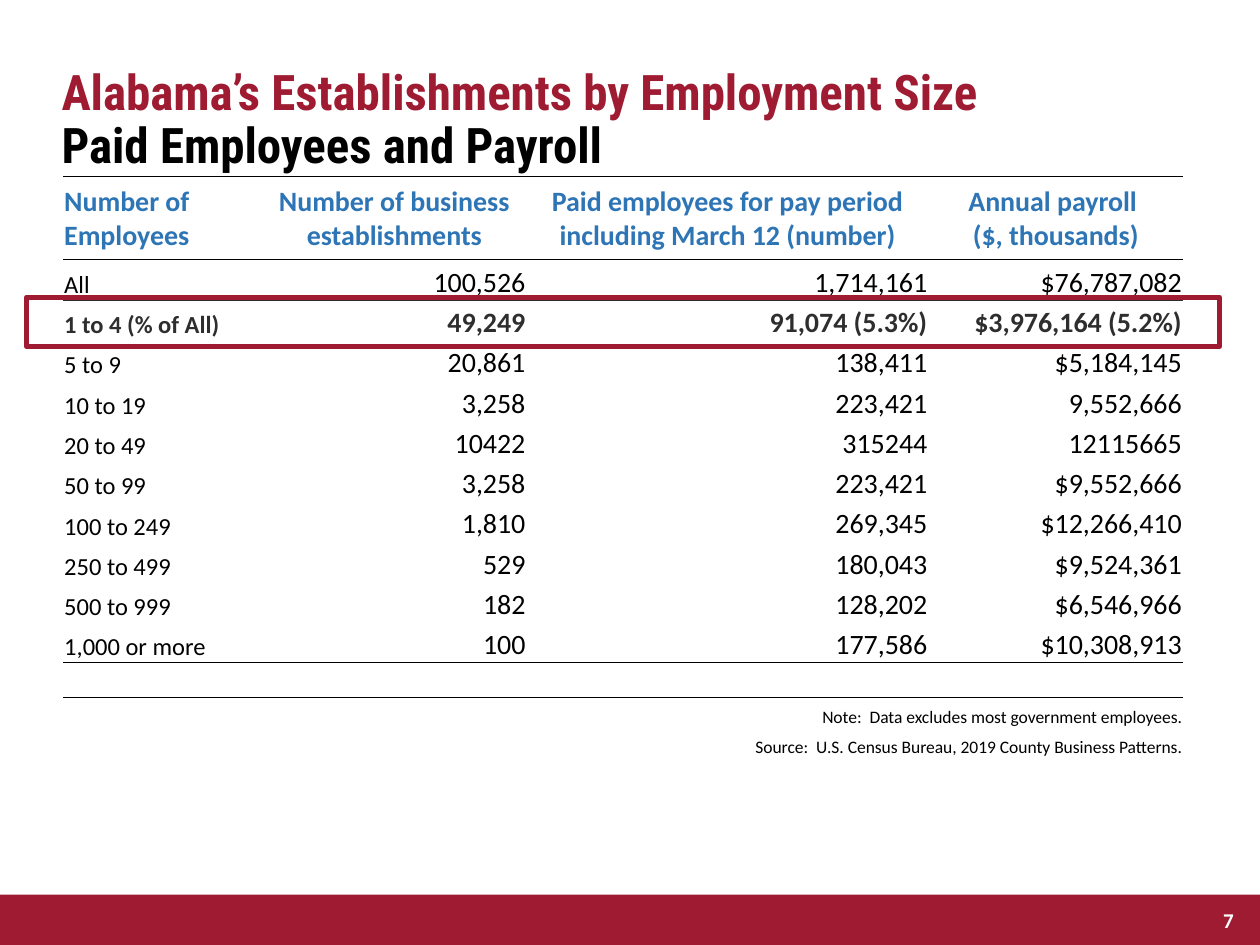
import pptx
import pptx.util
import pptx.dml.color
import pptx.enum.shapes
import pptx.enum.text
import pptx.oxml.ns
from lxml import etree

Inches, Pt = pptx.util.Inches, pptx.util.Pt
RGBColor = pptx.dml.color.RGBColor
Align, Anchor = pptx.enum.text.PP_ALIGN, pptx.enum.text.MSO_ANCHOR
qn = pptx.oxml.ns.qn

RED = RGBColor(0x9E, 0x1B, 0x32)
BLUE = RGBColor(0x2E, 0x75, 0xB6)
BLACK = RGBColor(0, 0, 0)
WHITE = RGBColor(255, 255, 255)
PLAIN = "{2D5ABB26-0587-4C30-8999-92F81FD0307C}"  # no style, no grid

HEAD = ["Number of Employees", "Number of business establishments",
        "Paid employees for pay period including March 12 (number)",
        "Annual payroll \n($, thousands)"]
ROWS = [
    ["All", "100,526", "1,714,161", "$76,787,082"],
    ["1 to 4 (% of All)", "49,249", "91,074 (5.3%)", "$3,976,164 (5.2%)"],
    ["5 to 9", "20,861", "138,411", "$5,184,145"],
    ["10 to 19", "3,258", "223,421", "9,552,666"],
    ["20 to 49", "10422", "315244", "12115665"],
    ["50 to 99", "3,258", "223,421", "$9,552,666"],
    ["100 to 249", "1,810", "269,345", "$12,266,410"],
    ["250 to 499", "529", "180,043", "$9,524,361"],
    ["500 to 999", "182", "128,202", "$6,546,966"],
    ["1,000 or more", "100", "177,586", "$10,308,913"],
]
NOTES = ["", "Note:  Data excludes most government employees.",
         "Source:  U.S. Census Bureau, 2019 County Business Patterns."]
WIDTHS = [1.58, 2.1, 3.19, 2.02]
HEIGHTS = [0.66] + [0.32] * len(ROWS) + [0.28, 0.24, 0.24]


class Deck:
    base = {"name": "Calibri", "size": Pt(16), "bold": False}

    def __init__(self, slide):
        self.slide = slide

    def style(self, font, color, **extra):
        for key, value in {**self.base, **extra}.items():
            setattr(font, key, value)
        font.color.rgb = color

    def box(self, at, fill=None, line=None, alpha=None):
        rect = self.slide.shapes.add_shape(
            pptx.enum.shapes.MSO_SHAPE.RECTANGLE, *map(Inches, at))
        rect.shadow.inherit = False
        rect.fill.solid()
        rect.fill.fore_color.rgb = fill
        if alpha:
            tint = rect.fill._xPr.find(".//" + qn("a:srgbClr"))
            etree.SubElement(tint, qn("a:alpha"), val=str(alpha * 1000))
        if line:
            rect.line.color.rgb = line
            rect.line.width = Pt(2.75)
        else:
            rect.line.fill.background()

    def text(self, at, parts, align=Align.LEFT, anchor=Anchor.TOP,
             space=1.0, **extra):
        frame = self.slide.shapes.add_textbox(*map(Inches, at)).text_frame
        frame.word_wrap = True
        frame.vertical_anchor = anchor
        para = frame.paragraphs[0]
        para.alignment, para.line_spacing = align, space
        for i, (words, color) in enumerate(parts):
            if i:
                para.add_line_break()
            run = para.add_run()
            run.text = words
            self.style(run.font, color, **extra)

    def table(self, at, widths, heights):
        size = at + (sum(widths), sum(heights))
        grid = self.slide.shapes.add_table(
            len(heights), len(widths), *map(Inches, size)).table
        grid.first_row = grid.horz_banding = False
        grid._tbl.tblPr.find(qn("a:tableStyleId")).text = PLAIN
        for col, width in zip(grid.columns, widths):
            col.width = Inches(width)
        for row, height in zip(grid.rows, heights):
            row.height = Inches(height)
        return grid

    def cell(self, cell, words, color=BLACK, align=Align.RIGHT,
             anchor=Anchor.BOTTOM, edges=(), **extra):
        cell.margin_left = cell.margin_right = cell.margin_top = Inches(0.01)
        cell.margin_bottom = 0
        cell.vertical_anchor = anchor
        cell.text = words
        for para in cell.text_frame.paragraphs:
            para.alignment = align
            for run in para.runs:
                self.style(run.font, color, **extra)
            if not para.runs:
                etree.SubElement(para._p, qn("a:endParaRPr"), sz="1000")
        for edge in edges:
            line = etree.SubElement(cell._tc.get_or_add_tcPr(),
                                    qn("a:ln" + edge), w=str(Pt(1)))
            solid = etree.SubElement(line, qn("a:solidFill"))
            etree.SubElement(solid, qn("a:srgbClr"), val=str(BLACK))
        cell.fill.background()


def main():
    prs = pptx.Presentation()
    prs.slide_width, prs.slide_height = Inches(10), Inches(7.5)
    deck = Deck(prs.slides.add_slide(prs.slide_layouts[6]))

    # Footer band and page number
    deck.box((0, 7.1, 10, 0.4), fill=RED)
    deck.text((9.47, 7.1, 0.42, 0.4), [("7", WHITE)], align=Align.RIGHT,
              anchor=Anchor.MIDDLE, size=Pt(12), bold=True)

    # Title
    deck.text((0.39, 0.49, 9, 0.73),
              [("Alabama’s Establishments by Employment Size", RED),
               ("Paid Employees and Payroll", BLACK)],
              space=0.9, name="Roboto Condensed", size=Pt(28), bold=True)

    # Table header
    grid = deck.table((0.5, 1.4), WIDTHS, HEIGHTS)
    for c, words in enumerate(HEAD):
        deck.cell(grid.cell(0, c), words, BLUE, Align.CENTER if c else Align.LEFT,
                  Anchor.MIDDLE, edges="TB", bold=True)

    # Table body
    for r, row in enumerate(ROWS, 1):
        edges = {1: "T", len(ROWS): "B"}.get(r, "")
        for c, words in enumerate(row):
            deck.cell(grid.cell(r, c), words, edges=edges, bold=r == 2,
                      align=Align.RIGHT if c else Align.LEFT,
                      size=Pt(16 if c else 14))

    # Notes across the full width
    last = len(WIDTHS) - 1
    for r, words in enumerate(NOTES, len(ROWS) + 1):
        grid.cell(r, 0).merge(grid.cell(r, last))
        deck.cell(grid.cell(r, 0), words, size=Pt(10),
                  edges="" if words else "T")

    # Highlight on the smallest size class
    deck.box((0.21, 2.36, 9.47, 0.39), fill=WHITE, line=RED, alpha=18)

    prs.save("out.pptx")


if __name__ == "__main__":
    main()
